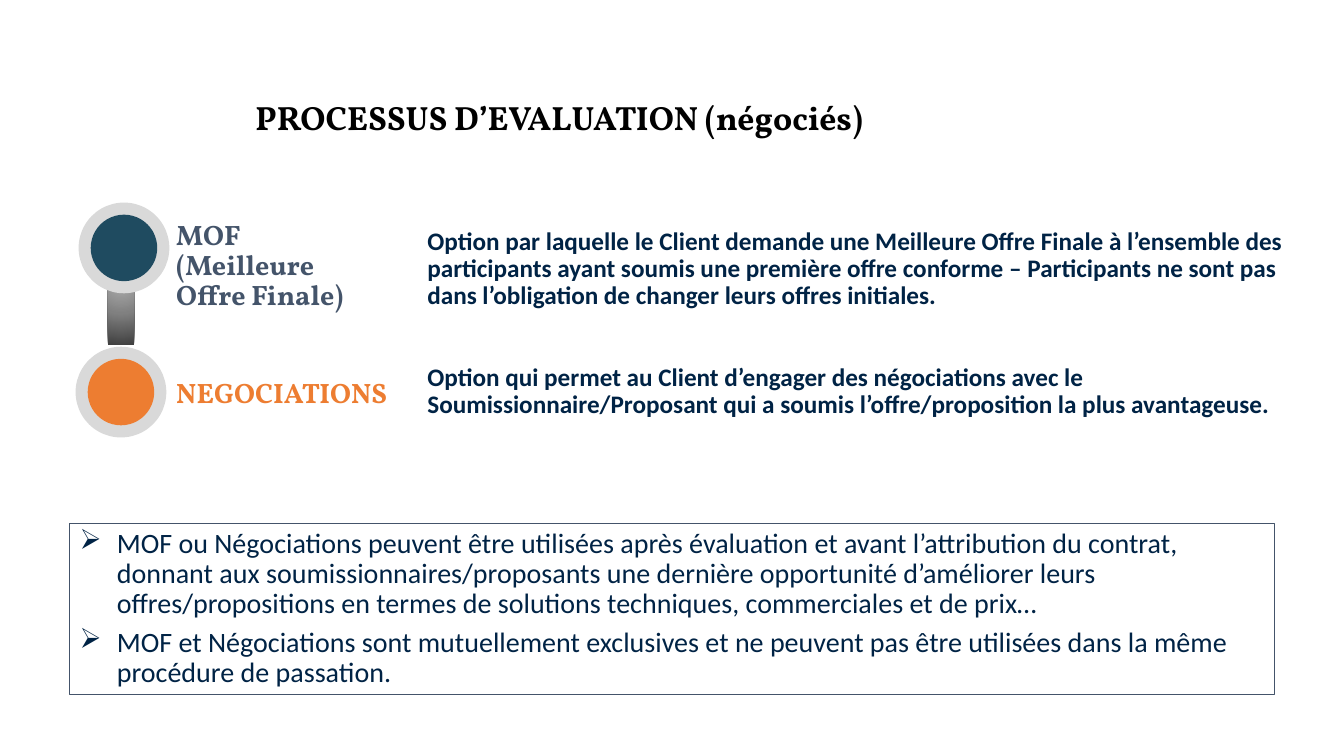
from lxml import etree
from pptx import Presentation
from pptx.dml.color import RGBColor
from pptx.enum.shapes import MSO_SHAPE
from pptx.enum.text import MSO_ANCHOR, MSO_AUTO_SIZE, PP_ALIGN
from pptx.oxml.ns import qn
from pptx.util import Inches, Pt

RECTANGLE, OVAL = MSO_SHAPE.RECTANGLE, MSO_SHAPE.OVAL
TOP, MIDDLE = MSO_ANCHOR.TOP, MSO_ANCHOR.MIDDLE
LEFT, CENTER = PP_ALIGN.LEFT, PP_ALIGN.CENTER
GROW = MSO_AUTO_SIZE.SHAPE_TO_FIT_TEXT

BODY_FONT, HEADING_FONT = "Calibri", "Vollkorn"
NAVY, SLATE, TEAL, ORANGE = "002345", "44546A", "1F4B60", "ED7D31"
BLACK, WHITE, RING_GREY = "000000", "FFFFFF", "D9D9D9"
BULLET, BULLET_INDENT = "➢", 0.37
RING_SIZE, RING_WIDTH = 0.9, 0.12

OPTIONS = [
    dict(badge=(0.78, 2.01), color=TEAL, label_color=SLATE,
         label_area=(1.65, 2.14, 1.97, 1.01),
         label=["MOF", "(Meilleure Offre Finale)"],
         detail_area=(4.14, 2.21, 8.88, 0.92),
         detail="Option par laquelle le Client demande une Meilleure Offre Finale à "
                "l’ensemble des participants ayant soumis une première offre conforme – "
                "Participants ne sont pas dans l’obligation de changer leurs offres initiales."),
    dict(badge=(0.75, 3.44), color=ORANGE, label_color=ORANGE,
         label_area=(1.65, 3.71, 3.14, 0.4),
         label=["NEGOCIATIONS"],
         detail_area=(4.14, 3.56, 8.88, 0.65),
         detail="Option qui permet au Client d’engager des négociations avec le "
                "Soumissionnaire/Proposant qui a soumis l’offre/proposition la plus "
                "avantageuse."),
]
NOTES = [
    "MOF ou Négociations peuvent être utilisées après évaluation et avant l’attribution "
    "du contrat, donnant aux soumissionnaires/proposants une dernière opportunité "
    "d’améliorer leurs offres/propositions en termes de solutions techniques, "
    "commerciales et de prix…",
    "MOF et Négociations sont mutuellement exclusives et ne peuvent pas être utilisées "
    "dans la même procédure de passation.",
]


def rgb(value):
    return RGBColor.from_string(value)


def write(shape, lines, size=18, font=BODY_FONT, color=NAVY, bold=False, align=LEFT,
          anchor=MIDDLE, line_spacing=0.9, gap=0, bullet=None):
    """Fill a shape with one paragraph per line; gap is the space around each, in points."""
    frame = shape.text_frame
    frame.word_wrap = True
    frame.auto_size = GROW
    frame.vertical_anchor = anchor
    for index, line in enumerate(lines):
        para = frame.add_paragraph() if index else frame.paragraphs[0]
        if bullet:
            properties = para._p.get_or_add_pPr()
            indent = Inches(BULLET_INDENT)
            properties.set("marL", str(indent))
            properties.set("indent", str(-indent))
            etree.SubElement(properties, qn("a:buChar"), char=bullet)
        para.alignment = align
        para.line_spacing = line_spacing
        para.space_before = Pt(gap if index else 0)
        para.space_after = Pt(gap)
        span = para.add_run()
        span.text = line
        span.font.size = Pt(size)
        span.font.name = font
        span.font.bold = bold
        span.font.color.rgb = rgb(color)


class SlideBuilder:
    def __init__(self, page):
        self.page = page

    def shape(self, kind, area, fill=None, line=None, parent=None):
        shapes = (parent or self.page).shapes
        shape = shapes.add_shape(kind, *map(Inches, area))
        shape.shadow.inherit = False
        if fill:
            shape.fill.solid()
            shape.fill.fore_color.rgb = rgb(fill)
        else:
            shape.fill.background()
        if line:
            shape.line.color.rgb = rgb(line)
            shape.line.width = Pt(0.75)
        else:
            shape.line.fill.background()
        return shape

    def text(self, area, lines, **style):
        box = self.page.shapes.add_textbox(*map(Inches, area))
        write(box, lines, **style)

    def radial_bar(self, area, stops):
        """Draw a bar shaded from its centre outwards; stops are (percent, colour)."""
        bar = self.shape(RECTANGLE, area)
        bar.fill.gradient()
        gradient = bar._element.spPr.find(qn("a:gradFill"))
        for child in list(gradient):
            gradient.remove(child)
        stop_list = etree.SubElement(gradient, qn("a:gsLst"))
        for percent, color in stops:
            stop = etree.SubElement(stop_list, qn("a:gs"), pos=str(percent * 1000))
            etree.SubElement(stop, qn("a:srgbClr"), val=color)
        shade = etree.SubElement(gradient, qn("a:path"), path="circle")
        etree.SubElement(shade, qn("a:fillToRect"),
                         {side: "50000" for side in "ltrb"})

    def badge(self, left, top, color):
        """Draw a coloured disc inside a grey ring."""
        group = self.page.shapes.add_group_shape()
        for inset, fill in ((0, RING_GREY), (RING_WIDTH, color)):
            size = RING_SIZE - 2 * inset
            self.shape(OVAL, (left + inset, top + inset, size, size), fill, parent=group)


def main():
    deck = Presentation()
    deck.slide_width, deck.slide_height = Inches(13.33), Inches(7.5)
    builder = SlideBuilder(deck.slides.add_slide(deck.slide_layouts[6]))

    title = builder.shape(RECTANGLE, (0.75, 0.91, 9.59, 0.5), WHITE)
    write(title, ["PROCESSUS D’EVALUATION (négociés)"], size=24, font=HEADING_FONT,
          color=BLACK, bold=True, align=CENTER, anchor=TOP, line_spacing=1.0)

    builder.radial_bar((1.07, 2.21, 0.26, 1.21),
                       [(7, "A6A6A6"), (48, "808080"), (100, "404040")])
    for option in OPTIONS:
        builder.badge(*option["badge"], option["color"])
        builder.text(option["label_area"], option["label"], size=20, font=HEADING_FONT,
                     color=option["label_color"], bold=True)
        builder.text(option["detail_area"], [option["detail"]], bold=True)

    notes = builder.shape(RECTANGLE, (0.69, 5.19, 11.95, 1.7), line=SLATE)
    write(notes, NOTES, size=20, gap=3, bullet=BULLET)

    deck.save("out.pptx")


if __name__ == "__main__":
    main()
